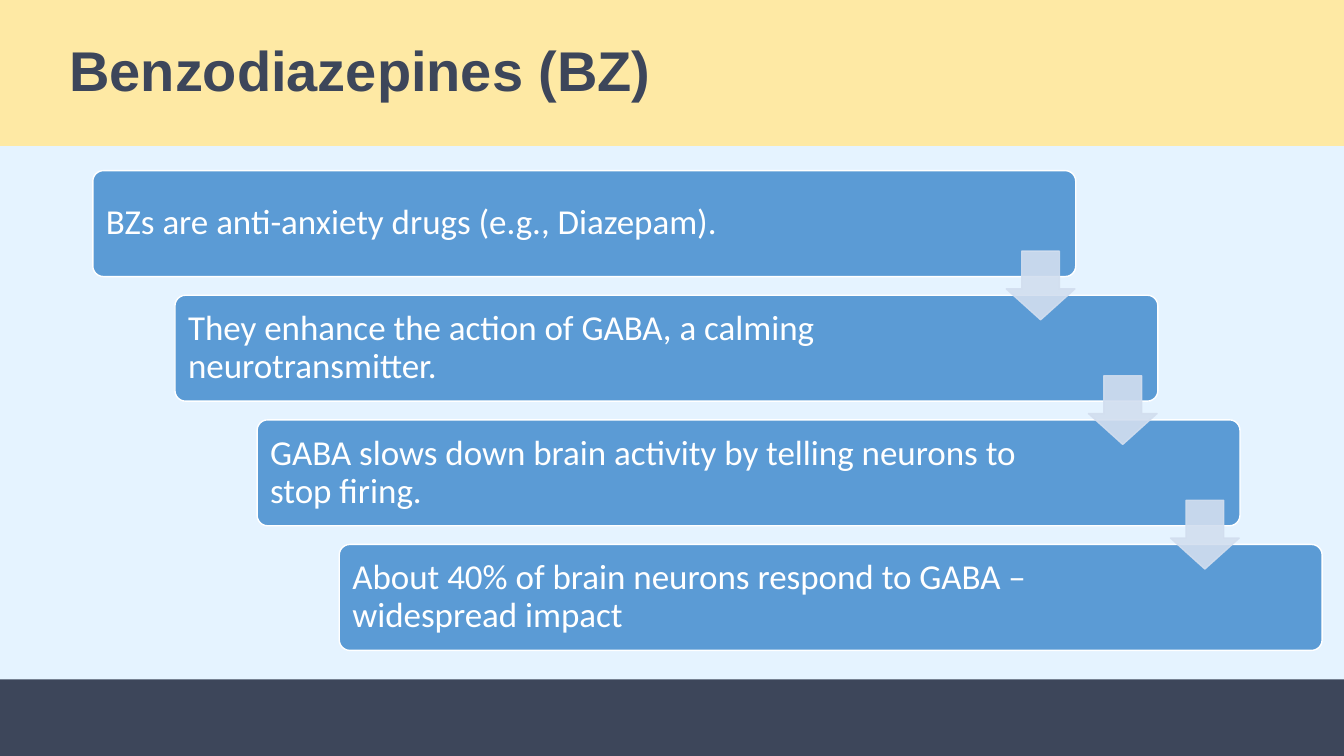
"""Build a slide of four cascading steps on how benzodiazepines work."""
from lxml import etree
from pptx import Presentation
from pptx.dml.color import RGBColor
from pptx.enum.shapes import MSO_SHAPE
from pptx.enum.text import MSO_ANCHOR, PP_ALIGN
from pptx.oxml.ns import qn
from pptx.util import Cm, Pt

RECTANGLE = MSO_SHAPE.RECTANGLE
ROUNDED = MSO_SHAPE.ROUNDED_RECTANGLE
DOWN_ARROW = MSO_SHAPE.DOWN_ARROW
MIDDLE = MSO_ANCHOR.MIDDLE
LEFT = PP_ALIGN.LEFT

PALE_BLUE = RGBColor(0xE5, 0xF3, 0xFF)
NAVY = RGBColor(0x3D, 0x46, 0x5A)
YELLOW = RGBColor(0xFE, 0xE9, 0xA4)
BLUE = RGBColor(0x5B, 0x9B, 0xD5)
ARROW_BLUE = RGBColor(0xD2, 0xDE, 0xEF)
WHITE = RGBColor(0xFF, 0xFF, 0xFF)

SLIDE_WIDTH, SLIDE_HEIGHT = 33.87, 19.05
FOOTER_TOP = 17.12
STEP_LEFT, STEP_TOP = 2.34, 4.3
STEP_WIDTH, STEP_HEIGHT = 24.77, 2.67
SHIFT_X, SHIFT_Y = 2.07, 3.14
ARROW_LEFT, ARROW_TOP, ARROW_SIZE = 25.36, 6.33, 1.73
LABEL_INSET = 0.08

STEPS = [
    ("BZs are anti-anxiety drugs (e.g., Diazepam).", 21.67),
    ("They enhance the action of GABA, a calming neurotransmitter.", 20.82),
    ("GABA slows down brain activity by telling neurons to stop firing.", 20.82),
    ("About 40% of brain neurons respond to GABA – widespread impact", 20.82),
]


def write(frame, text, *, font, size, color, bold=False, margin=0.25, left_margin=0.25):
    """Fill a text frame with one formatted paragraph."""
    frame.word_wrap = True
    frame.vertical_anchor = MIDDLE
    frame.margin_left = Cm(left_margin)
    frame.margin_right = frame.margin_top = frame.margin_bottom = Cm(margin)
    paragraph = frame.paragraphs[0]
    paragraph.text = text
    paragraph.alignment = LEFT
    paragraph.line_spacing = 0.9
    paragraph.font.name = font
    paragraph.font.size = Pt(size)
    paragraph.font.bold = bold
    paragraph.font.color.rgb = color


class Deck:
    """Hold the presentation style and the current slide."""

    def __init__(self):
        """Open a presentation with one blank slide."""
        self.presentation = Presentation()
        self.presentation.slide_width = Cm(SLIDE_WIDTH)
        self.presentation.slide_height = Cm(SLIDE_HEIGHT)
        self.slide = self.presentation.slides.add_slide(self.presentation.slide_layouts[6])
        background = self.slide.background.fill
        background.solid()
        background.fore_color.rgb = PALE_BLUE

    def block(self, kind, left, top, width, height, fill, line=None, adjustments=()):
        """Add a filled preset shape."""
        block = self.slide.shapes.add_shape(kind, Cm(left), Cm(top), Cm(width), Cm(height))
        block.shadow.inherit = False
        block.fill.solid()
        block.fill.fore_color.rgb = fill
        if line is None:
            block.line.fill.background()
        else:
            block.line.color.rgb = line
            block.line.width = Pt(1)
        for index, value in enumerate(adjustments):
            block.adjustments[index] = value
        return block

    def step(self, left, top, text, label_width):
        """Add a rounded step with its label."""
        self.block(ROUNDED, left, top, STEP_WIDTH, STEP_HEIGHT, BLUE, WHITE, (0.1,))
        label = self.slide.shapes.add_textbox(
            Cm(left + LABEL_INSET), Cm(top + LABEL_INSET),
            Cm(label_width), Cm(STEP_HEIGHT - 2 * LABEL_INSET))
        write(label.text_frame, text, font="Calibri", size=25, color=WHITE)

    def arrow(self, left, top):
        """Add a slightly transparent down arrow."""
        arrow = self.block(DOWN_ARROW, left, top, ARROW_SIZE, ARROW_SIZE,
                           ARROW_BLUE, ARROW_BLUE, (0.55, 0.45))
        for color in arrow.element.spPr.iter(qn("a:srgbClr")):
            etree.SubElement(color, qn("a:alpha"), val="90000")


def main():
    """Compose and save the slide."""
    deck = Deck()
    deck.block(RECTANGLE, 0, FOOTER_TOP, SLIDE_WIDTH, SLIDE_HEIGHT - FOOTER_TOP, NAVY)
    title = deck.block(RECTANGLE, 0, 0, SLIDE_WIDTH, 3.68, YELLOW)
    write(title.text_frame, "Benzodiazepines (BZ)", font="Arial", size=40,
          color=NAVY, bold=True, margin=0.13, left_margin=1.75)
    for index, (text, label_width) in enumerate(STEPS):
        deck.step(STEP_LEFT + index * SHIFT_X, STEP_TOP + index * SHIFT_Y, text, label_width)
    for index in range(len(STEPS) - 1):
        deck.arrow(ARROW_LEFT + index * SHIFT_X, ARROW_TOP + index * SHIFT_Y)
    deck.presentation.save("out.pptx")


if __name__ == "__main__":
    main()
